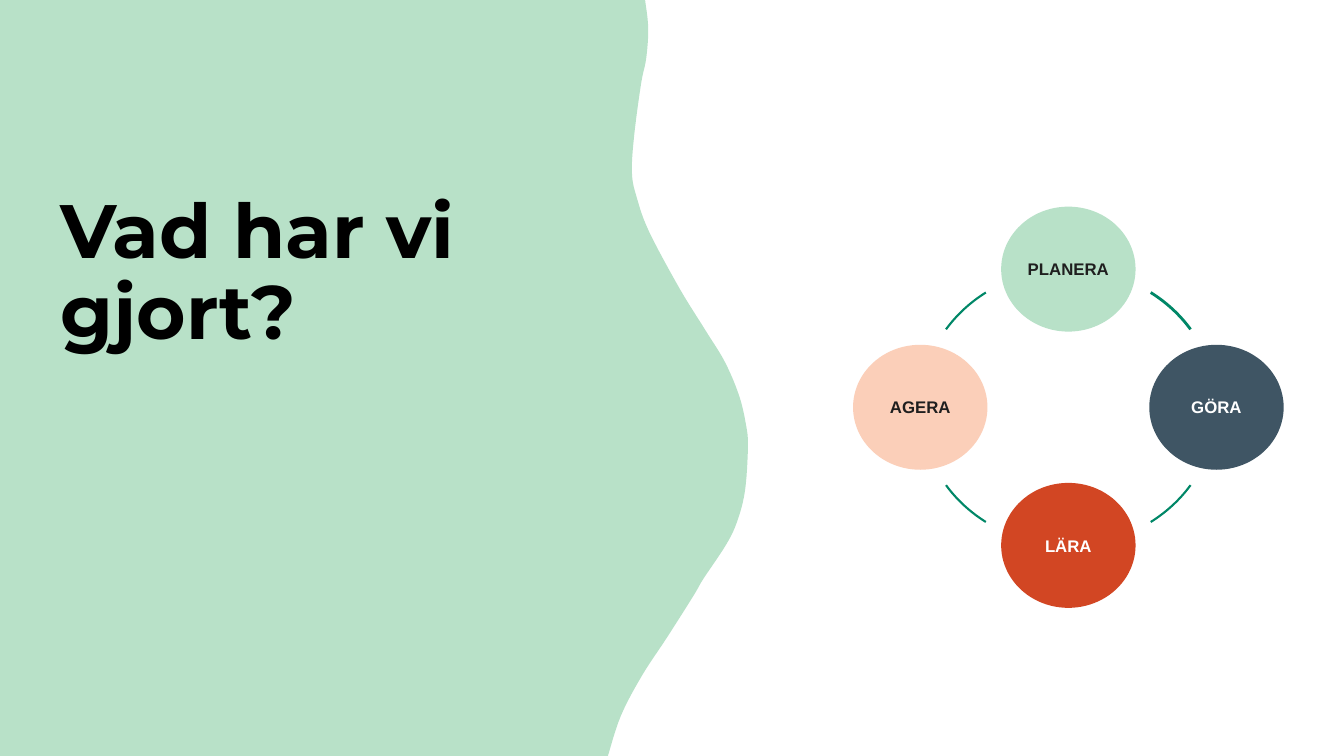
from dataclasses import dataclass
import math

import pptx
import pptx.dml.color
import pptx.enum.shapes
import pptx.enum.text
import pptx.util

RGBColor = pptx.dml.color.RGBColor
MINT = RGBColor(0xB8, 0xE1, 0xC8)
PEACH = RGBColor(0xFB, 0xCF, 0xB9)
RUST = RGBColor(0xD2, 0x46, 0x23)
SLATE = RGBColor(0x3F, 0x55, 0x64)
GREEN = RGBColor(0x00, 0x87, 0x67)
INK = RGBColor(0x1F, 0x1F, 0x1F)
BLACK = RGBColor(0, 0, 0)
WHITE = RGBColor(0xFF, 0xFF, 0xFF)

# The slide is a grid of 100 columns by 100 rows
WIDTH = pptx.util.Inches(13.333)
HEIGHT = pptx.util.Inches(7.5)

CYCLE_COLUMN, CYCLE_ROW = 79.49, 53.87
RADIUS_COLUMNS, RADIUS_ROWS = 11.02, 18.27
STEP_COLUMNS, STEP_ROWS = 10, 16.53
ARC_SWEEP = 21.8

# Right-hand edge of the wave, as (column, row) from top to bottom
WAVE_EDGE = [
    (48, 0), (48.23, 3.73), (48.08, 7.73), (47.7, 11.07), (47.18, 18),
    (47.02, 22.93), (47.4, 26.27), (48.3, 30.67), (50.55, 38.13),
    (52.5, 43.73), (53.93, 47.87), (54.98, 52.27), (55.5, 56.13),
    (55.65, 59.07), (55.43, 64.93), (54.83, 69.07), (54, 72.13),
    (52.35, 76.53), (51.6, 78.8), (49.65, 84.27), (47.78, 89.33),
    (46.2, 94.67), (45.23, 100),
]


@dataclass(frozen=True)
class Step:
    label: str
    fill: RGBColor
    ink: RGBColor
    angle: int  # clockwise from three o'clock
    arc_offset: float  # from the step to the start of the arc after it
    arc_points: float


STEPS = [
    Step("PLANERA", MINT, INK, 270, 35.7, 2),
    Step("GÖRA", SLATE, WHITE, 0, 32.5, 1.5),
    Step("LÄRA", RUST, WHITE, 90, 35.7, 1.5),
    Step("AGERA", PEACH, INK, 180, 32.5, 1.5),
]


def columns(count: float) -> int:
    return round(WIDTH * count / 100)


def rows(count: float) -> int:
    return round(HEIGHT * count / 100)


def smooth_curve(knots: list, pieces: int = 6) -> list:
    """Points of a Catmull-Rom curve through the knots."""
    padded = [knots[0], *knots, knots[-1]]
    points = [knots[0]]
    for a, b, c, d in zip(padded, padded[1:], padded[2:], padded[3:]):
        for piece in range(1, pieces + 1):
            t = piece / pieces
            points.append(tuple(
                q + (r - p) * t / 2
                + (2 * p - 5 * q + 4 * r - s) * t ** 2 / 2
                + (3 * q - p - 3 * r + s) * t ** 3 / 2
                for p, q, r, s in zip(a, b, c, d)
            ))
    return points


def draw_wave(slide) -> None:
    outline = [(columns(x), rows(y)) for x, y in smooth_curve(WAVE_EDGE)]
    builder = slide.shapes.build_freeform(0, 0)
    builder.add_line_segments([*outline, (0, HEIGHT)], close=True)
    wave = builder.convert_to_shape()
    wave.shadow.inherit = False
    wave.fill.solid()
    wave.fill.fore_color.rgb = MINT
    wave.line.fill.background()
    # Send the wave behind the title
    wave._element.getparent().insert(2, wave._element)


def format_text(frame, font_name: str, points: float, ink: RGBColor) -> None:
    frame.vertical_anchor = pptx.enum.text.MSO_ANCHOR.MIDDLE
    for paragraph in frame.paragraphs:
        for run in paragraph.runs:
            run.font.name = font_name
            run.font.size = pptx.util.Pt(points)
            run.font.bold = True
            run.font.color.rgb = ink


def draw_title(slide) -> None:
    title = slide.shapes.title
    title.left, title.top = columns(4.5), rows(16.4)
    title.width, title.height = columns(39.7), rows(39.87)
    frame = title.text_frame
    frame.text = "Vad har vi gjort?"
    frame.word_wrap = True
    frame.auto_size = pptx.enum.text.MSO_AUTO_SIZE.NONE
    frame.margin_left = frame.margin_right = 0
    frame.paragraphs[0].alignment = pptx.enum.text.PP_ALIGN.LEFT
    frame.paragraphs[0].line_spacing = 0.9
    format_text(frame, "Montserrat", 54, BLACK)


def draw_step(slide, step: Step) -> None:
    angle = math.radians(step.angle)
    column = CYCLE_COLUMN + RADIUS_COLUMNS * math.cos(angle)
    row = CYCLE_ROW + RADIUS_ROWS * math.sin(angle)
    disc = slide.shapes.add_shape(
        pptx.enum.shapes.MSO_SHAPE.OVAL,
        columns(column - STEP_COLUMNS / 2), rows(row - STEP_ROWS / 2),
        columns(STEP_COLUMNS), rows(STEP_ROWS))
    disc.shadow.inherit = False
    disc.fill.solid()
    disc.fill.fore_color.rgb = step.fill
    disc.line.fill.background()
    frame = disc.text_frame
    frame.text = step.label
    frame.margin_left = frame.margin_right = 0
    frame.margin_top = frame.margin_bottom = 0
    frame.paragraphs[0].alignment = pptx.enum.text.PP_ALIGN.CENTER
    format_text(frame, "Arial", 12, step.ink)


def draw_arc(slide, step: Step) -> None:
    arc = slide.shapes.add_shape(
        pptx.enum.shapes.MSO_SHAPE.ARC,
        columns(CYCLE_COLUMN - RADIUS_COLUMNS), rows(CYCLE_ROW - RADIUS_ROWS),
        columns(2 * RADIUS_COLUMNS), rows(2 * RADIUS_ROWS))
    start = (step.angle + step.arc_offset) % 360
    # One degree is 0.6 of an adjustment unit
    arc.adjustments[0] = start * 0.6
    arc.adjustments[1] = (start + ARC_SWEEP) * 0.6
    arc.shadow.inherit = False
    arc.fill.background()
    arc.line.color.rgb = GREEN
    arc.line.width = pptx.util.Pt(step.arc_points)


def main() -> None:
    presentation = pptx.Presentation()
    presentation.slide_width, presentation.slide_height = WIDTH, HEIGHT
    slide = presentation.slides.add_slide(presentation.slide_layouts[5])
    draw_wave(slide)
    draw_title(slide)
    # Cycle of four steps, each followed by an arc
    for step in STEPS:
        draw_step(slide, step)
        draw_arc(slide, step)
    presentation.save("out.pptx")


if __name__ == "__main__":
    main()
